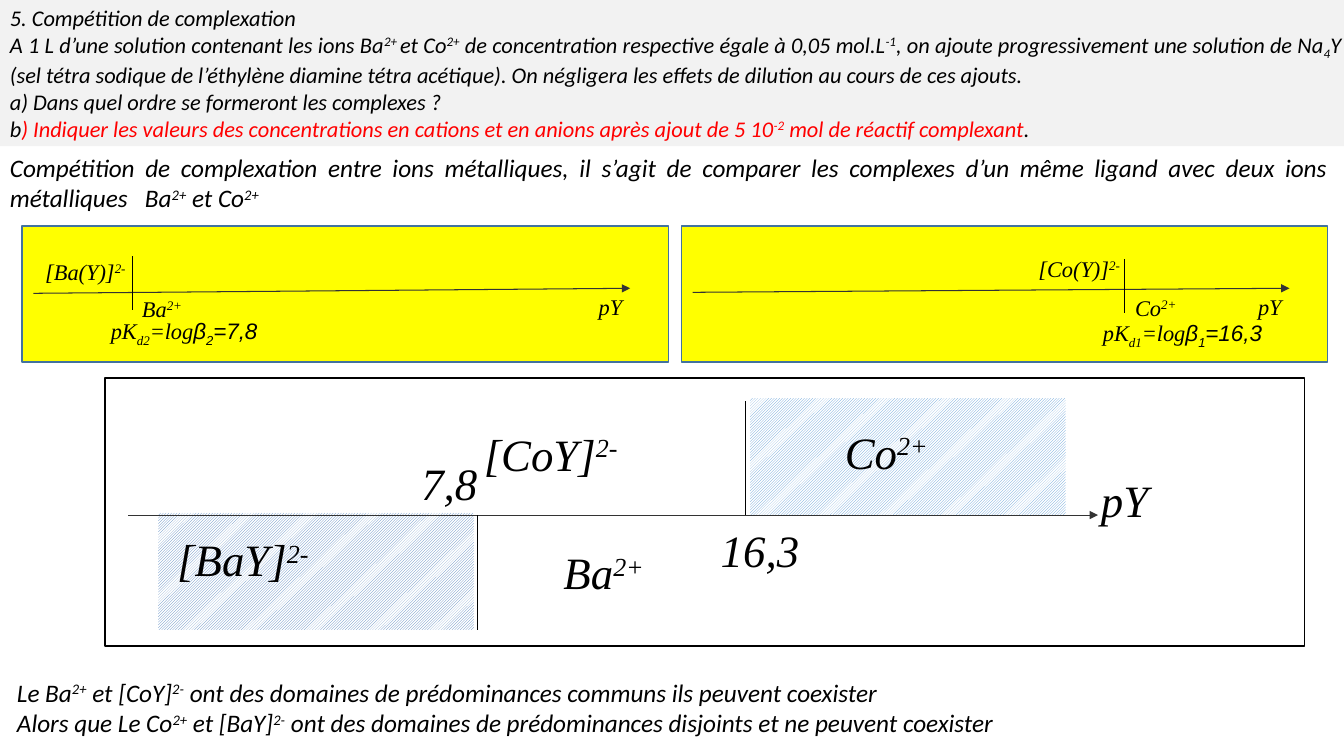
from pptx import Presentation
from pptx.dml.color import RGBColor
from pptx.enum.dml import MSO_PATTERN
from pptx.enum.shapes import MSO_CONNECTOR, MSO_SHAPE
from pptx.enum.text import MSO_ANCHOR, PP_ALIGN
from pptx.oxml.ns import qn
from pptx.util import Inches, Pt
from lxml import etree

RECT = MSO_SHAPE.RECTANGLE
LINE = MSO_CONNECTOR.STRAIGHT
HATCH = MSO_PATTERN.LIGHT_UPWARD_DIAGONAL
JUST, LEFT = PP_ALIGN.JUSTIFY, PP_ALIGN.LEFT
TOP, MID = MSO_ANCHOR.TOP, MSO_ANCHOR.MIDDLE

HEX = {
    "black": "000000", "white": "FFFFFF", "red": "FF0000", "gray": "F2F2F2",
    "yellow": "FFFF00", "edge": "43739E", "axis": "333333",
    "blue": "4F81BD", "sky": "5B9BD5",
}
SERIF, SANS, GREEK = "Times New Roman", "Calibri", "Arial"

# Marks inside braces: ^ superscript, _ subscript, ! red, @ Greek font
TASK = [
    "5. Compétition de complexation",
    "A 1 L d’une solution contenant les ions Ba{^2+ }et Co{^2+} de concentration "
    "respective égale à 0,05 mol.L{^-1}, on ajoute progressivement une solution de "
    "Na{_4}Y (sel tétra sodique de l’éthylène diamine tétra acétique). On négligera "
    "les effets de dilution au cours de ces ajouts.",
    "a) Dans quel ordre se formeront les complexes ?",
    "b{!) Indiquer les valeurs des concentrations en cations et en anions après "
    "ajout de 5 10}{!^-2}{! mol de réactif complexant}.",
]
IDEA = [
    "Compétition de complexation entre ions métalliques, il s’agit de comparer les "
    "complexes d’un même ligand avec deux ions métalliques   Ba{^2+} et Co{^2+}",
]
END = [
    "Le Ba{^2+} et [CoY]{^2-} ont des domaines de prédominances communs ils peuvent coexister",
    "Alors que Le Co{^2+} et [BaY]{^2-} ont des domaines de prédominances disjoints "
    "et ne peuvent coexister",
]
PANELS = [
    {"left": 0.22, "tick": (1.31, 2.54), "start": 2.91, "labels": [
        ("[Ba(Y)]{^2-}", 0.35, 2.51, 1.65), ("Ba{^2+}", 1.31, 2.88, 1.23),
        ("pK{_d2}=log{@β}{@_2}{@=7,8}", 1, 3.1, 1.71)]},
    {"left": 6.76, "tick": (11.15, 2.57), "start": 2.9, "labels": [
        ("[Co(Y)]{^2-}", 10.2, 2.48, 1.65), ("Co{^2+}", 11.16, 2.87, 1.23),
        ("pK{_d1}=log{@β}{@_1}{@=16,3}", 10.84, 3.12, 1.83)]},
]
ZONES = [(1.57, 5.09, "blue"), (7.44, 3.95, "sky")]
MARKS = [
    ("pY", 10.82, 4.64, 1.85), ("Ba{^2+}", 5.49, 5.36, 2.22),
    ("7,8", 4.08, 4.47, 1.85), ("[CoY]{^2-}", 4.7, 4.18, 3.16),
    ("16,3", 7.05, 5.14, 1.85), ("Co{^2+}", 8.28, 4.16, 1.62),
    ("[BaY]{^2-}", 1.66, 5.23, 2.96),
]
BASE = {"^": "30000", "_": "-25000"}

deck = Presentation()
deck.slide_width, deck.slide_height = Inches(13.33), Inches(7.5)
slide = deck.slides.add_slide(deck.slide_layouts[6])


def tone(name):
    return RGBColor.from_string(HEX[name])


def write(frame, lines, size=16, face=SERIF, align=LEFT, anchor=TOP):
    frame.word_wrap = True
    frame.vertical_anchor = anchor
    for i, line in enumerate(lines):
        para = frame.paragraphs[0] if i == 0 else frame.add_paragraph()
        para.alignment = align
        for piece in line.replace("}", "{").split("{"):
            if not piece:
                continue
            body = piece.lstrip("!@^_")
            flags = piece[:len(piece) - len(body)]
            run = para.add_run()
            run.text = body
            font = run.font
            font.size, font.italic = Pt(size), True
            font.name = GREEK if "@" in flags else face
            font.color.rgb = tone("red" if "!" in flags else "black")
            for flag in flags:
                if flag in BASE:
                    font._element.set("baseline", BASE[flag])


def label(lines, x, y, w, h, **style):
    box = slide.shapes.add_textbox(Inches(x), Inches(y), Inches(w), Inches(h))
    write(box.text_frame, lines, **style)


def block(x, y, w, h, fill=None, edge=None, hatch=None):
    box = slide.shapes.add_shape(RECT, Inches(x), Inches(y), Inches(w), Inches(h))
    box.shadow.inherit = False
    if hatch:
        box.fill.patterned()
        box.fill.pattern = HATCH
        box.fill.fore_color.rgb = tone(hatch)
        box.fill.back_color.rgb = tone("white")
    elif fill:
        box.fill.solid()
        box.fill.fore_color.rgb = tone(fill)
    else:
        box.fill.background()
    if edge:
        box.line.color.rgb = tone(edge)
        box.line.width = Pt(1)
    else:
        box.line.fill.background()
    return box


def rule(x1, y1, x2, y2, color="black", width=0.75, arrow=False):
    link = slide.shapes.add_connector(
        LINE, Inches(x1), Inches(y1), Inches(x2), Inches(y2))
    link.line.color.rgb = tone(color)
    link.line.width = Pt(width)
    if arrow:
        etree.SubElement(link.line._get_or_add_ln(), qn("a:tailEnd"), type="triangle")
    etree.SubElement(link._element.spPr, qn("a:effectLst"))


head = block(0, 0, 13.4, 1.45, fill="gray")
write(head.text_frame, TASK, face=SANS, align=JUST, anchor=MID)
label(IDEA, 0, 1.46, 13.27, 0.71, size=18, face=SANS, align=JUST)

for panel in PANELS:
    left = panel["left"]
    x, y = panel["tick"]
    block(left, 2.24, 6.41, 1.35, fill="yellow", edge="edge")
    rule(left + 0.11, panel["start"], left + 6.03, 2.86, color="axis", arrow=True)
    rule(x, y, x, y + 0.54)
    for text, x, y, w in panel["labels"] + [("pY", left + 5.62, 2.86, 1.03)]:
        label([text], x, y, w, 0.81)

for x, y, color in ZONES:
    block(x, y, 3.13, 1.16, hatch=color)
rule(1.27, 5.11, 10.89, 5.11, color="axis", arrow=True)
for text, x, y, w in MARKS:
    label([text], x, y, w, 0.9, size=32)
rule(4.73, 5.11, 4.73, 6.25, width=0.5)
rule(7.39, 3.98, 7.39, 5.11)
block(1.04, 3.75, 11.9, 2.66, edge="black")
label(END, 0.07, 6.67, 13.27, 0.71, size=18, face=SANS, align=JUST)

deck.save("out.pptx")
